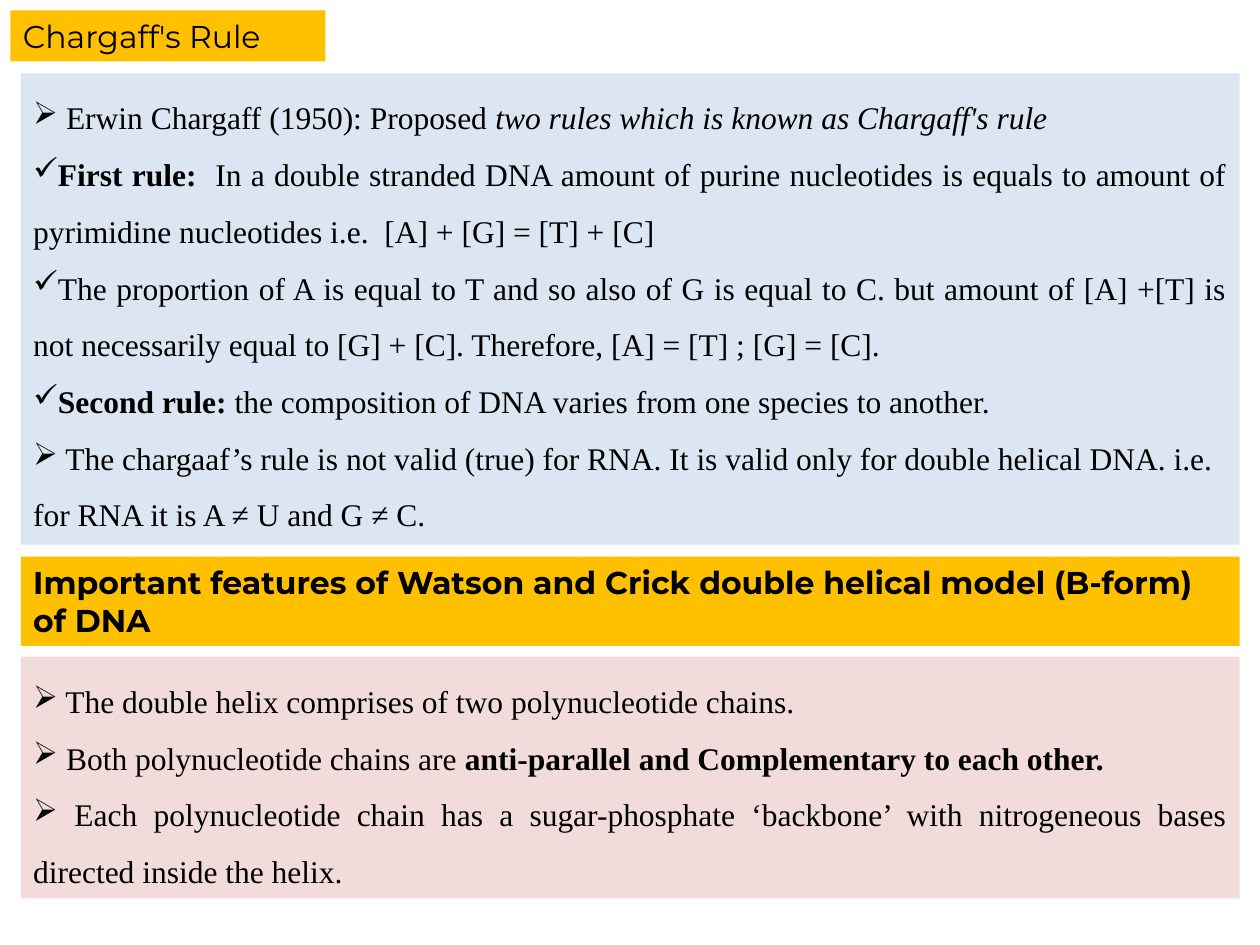
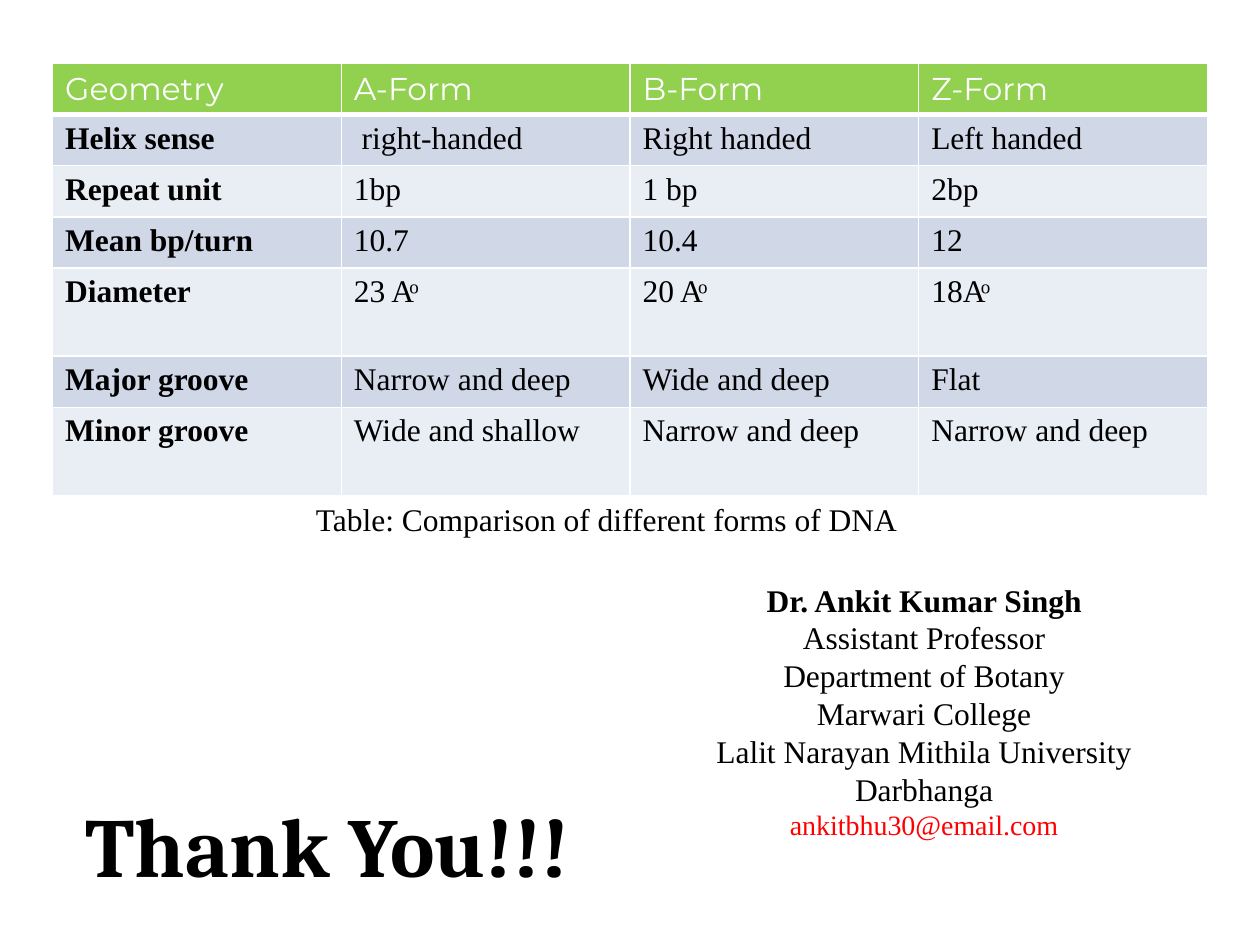
from dataclasses import dataclass

from lxml.etree import SubElement
from pptx import Presentation
from pptx.dml.color import RGBColor
from pptx.enum.shapes import MSO_SHAPE
from pptx.enum.text import MSO_ANCHOR, MSO_AUTO_SIZE, PP_ALIGN
from pptx.oxml.ns import qn
from pptx.util import Cm, Pt


@dataclass(frozen=True)
class Theme:
    ink: str = "000000"
    white: str = "FFFFFF"
    red: str = "FF0000"
    gold: str = "FFC000"
    blue: str = "DCE6F2"
    pink: str = "F2DCDB"
    green: str = "92D050"
    bands: tuple = ("D0D8E8", "E9EDF4")
    head: str = "Montserrat"
    body: str = "Times New Roman"
    thanks: str = "Cambria"
    small: int = 16
    base: int = 18
    huge: int = 48


THEME = Theme()
LEFT, WIDTH = 0.42, 24.57
ARROW, TICK = "➢", "✓"
JUST = PP_ALIGN.JUSTIFY

# Each rule: bullet, alignment, then runs of (text, style)
RULES = [
    (ARROW, JUST, [(" Erwin Chargaff (1950): Proposed ", ""),
                   ("two rules which is known as Chargaff's rule", "i")]),
    (TICK, JUST, [("First rule:", "b"),
                  ("  In a double stranded DNA amount of purine nucleotides is equals "
                   "to amount of pyrimidine nucleotides i.e.  [A] + [G] = [T] + [C]", "")]),
    (TICK, JUST, [("The proportion of A is equal to T and so also of G is equal to C. "
                   "but amount of [A] +[T] is not necessarily equal to [G] + [C]. "
                   "Therefore, [A] = [T] ; [G] = [C].", "")]),
    (TICK, JUST, [("Second rule: ", "b"),
                  ("the composition of DNA varies from one species to another.", "")]),
    (ARROW, PP_ALIGN.LEFT, [(" The chargaaf’s rule is not valid (true) for RNA. It is valid "
                             "only for double helical DNA. i.e. for RNA it is A ≠ U and "
                             "G ≠ C.", "")]),
]
TRAITS = [
    (ARROW, JUST, [(" The double helix comprises of two polynucleotide chains.", "")]),
    (ARROW, JUST, [(" Both polynucleotide chains are ", ""),
                   ("anti-parallel and Complementary to each other.", "b")]),
    (ARROW, JUST, [(" Each polynucleotide chain has a sugar-phosphate ‘backbone’ with "
                    "nitrogeneous bases directed inside the helix.", "")]),
]
FORMS = [
    ("Geometry", "A-Form", "B-Form", "Z-Form"),
    ("Helix sense", " right-handed", "Right handed", "Left handed"),
    ("Repeat unit", "1bp", "1 bp", "2bp"),
    ("Mean bp/turn", "10.7", "10.4", "12"),
    ("Diameter", "23 Aͦ", "20 Aͦ", "18Aͦ"),
    ("Major groove", "Narrow and deep", "Wide and deep", "Flat"),
    ("Minor groove", "Wide and shallow", "Narrow and deep", "Narrow and deep"),
]
TALL = ("Diameter", "Minor groove")
AUTHOR = ["Dr. Ankit Kumar Singh", "Assistant Professor", "Department of Botany",
          "Marwari College", "Lalit Narayan Mithila University", "Darbhanga",
          "ankitbhu30@email.com"]


def style(run, font=THEME.body, size=THEME.base, color=THEME.ink, bold=False, slant=False):
    run.font.name = font
    run.font.size = Pt(size)
    run.font.color.rgb = RGBColor.from_string(color)
    run.font.bold = bold
    run.font.italic = slant


def write(para, text, **look):
    para.text = text
    style(para.runs[0], **look)


def panel(slide, left, top, width, height, fill):
    """Add a filled box and return its text frame."""
    box = slide.shapes.add_shape(MSO_SHAPE.RECTANGLE, Cm(left), Cm(top), Cm(width), Cm(height))
    box.shadow.inherit = False
    box.fill.solid()
    box.fill.fore_color.rgb = RGBColor.from_string(fill)
    box.line.fill.background()
    frame = box.text_frame
    frame.word_wrap = True
    frame.auto_size = MSO_AUTO_SIZE.SHAPE_TO_FIT_TEXT
    frame.vertical_anchor = MSO_ANCHOR.TOP
    return frame


def banner(slide, left, top, width, height, text, bold=False):
    para = panel(slide, left, top, width, height, THEME.gold).paragraphs[0]
    para.alignment = PP_ALIGN.LEFT
    write(para, text, font=THEME.head, bold=bold)


def points(slide, top, height, fill, items):
    """Add a full-width panel of bulleted paragraphs."""
    frame = panel(slide, LEFT, top, WIDTH, height, fill)
    frame.text = "\n".join(runs[0][0] for mark, align, runs in items)
    for para, (mark, align, runs) in zip(frame.paragraphs, items):
        para.alignment = align
        para.line_spacing = 1.5
        SubElement(para._p.get_or_add_pPr(), qn("a:buChar"), char=mark)
        for text, kind in runs[1:]:
            para.add_run().text = text
        for run, (text, kind) in zip(para.runs, runs):
            style(run, bold=kind == "b", slant=kind == "i")


def label(slide, left, top, width, height, lines, align=PP_ALIGN.LEFT, wrap=True, **look):
    """Add a text box and return its paragraphs."""
    frame = slide.shapes.add_textbox(Cm(left), Cm(top), Cm(width), Cm(height)).text_frame
    frame.word_wrap = wrap
    frame.auto_size = MSO_AUTO_SIZE.SHAPE_TO_FIT_TEXT
    frame.text = "\n".join(lines)
    for para in frame.paragraphs:
        para.alignment = align
        style(para.runs[0], **look)
    return frame.paragraphs


def edge(cell, side, width):
    line = SubElement(cell._tc.get_or_add_tcPr(), qn(f"a:ln{side}"), w=str(Pt(width)))
    fill = SubElement(line, qn("a:solidFill"))
    SubElement(fill, qn("a:srgbClr"), val=THEME.white)


def paint(cell, row, col, text):
    head = row == 0
    thick = {"B": 3} if head else {"T": 3} if row == 1 else {}
    for side in "LRTB":
        edge(cell, side, thick.get(side, 1))
    cell.fill.solid()
    fill = THEME.green if head else THEME.bands[(row - 1) % 2]
    cell.fill.fore_color.rgb = RGBColor.from_string(fill)
    para = cell.text_frame.paragraphs[0]
    if head:
        write(para, text, font=THEME.head, color=THEME.white)
    else:
        write(para, text, bold=col == 0)


def grid(slide, left, top, width, rows):
    heights = [Cm(1.78 if row[0] in TALL else 1.03) for row in rows]
    table = slide.shapes.add_table(len(rows), len(rows[0]), Cm(left), Cm(top),
                                   Cm(width), sum(heights)).table
    for r, (row, height) in enumerate(zip(rows, heights)):
        table.rows[r].height = height
        for c, text in enumerate(row):
            paint(table.cell(r, c), r, c, text)


def rules(slide):
    banner(slide, 0.21, 0.21, 6.35, 1.03, "Chargaff's Rule")
    points(slide, 1.48, 9.5, THEME.blue, RULES)
    banner(slide, LEFT, 11.22, WIDTH, 1.8, "Important features of Watson and Crick "
           "double helical model (B-form) of DNA", bold=True)
    points(slide, 13.24, 4.87, THEME.pink, TRAITS)


def forms(slide):
    grid(slide, 1.06, 1.28, 23.28, FORMS)
    label(slide, 6.12, 9.95, 18.87, 1.03, ["Table: Comparison of different forms of DNA"])
    lines = label(slide, 12.28, 11.58, 12.7, 5.56, AUTHOR, PP_ALIGN.CENTER)
    style(lines[0].runs[0], bold=True)
    style(lines[-1].runs[0], size=THEME.small, color=THEME.red)
    label(slide, 1.48, 15.88, 10.64, 2.31, ["Thank You!!!"], wrap=False,
          font=THEME.thanks, size=THEME.huge, bold=True)


def main():
    deck = Presentation()
    deck.slide_width, deck.slide_height = Cm(25.4), Cm(19.05)
    for build in (rules, forms):
        build(deck.slides.add_slide(deck.slide_layouts[6]))
    deck.save("out.pptx")


if __name__ == "__main__":
    main()
